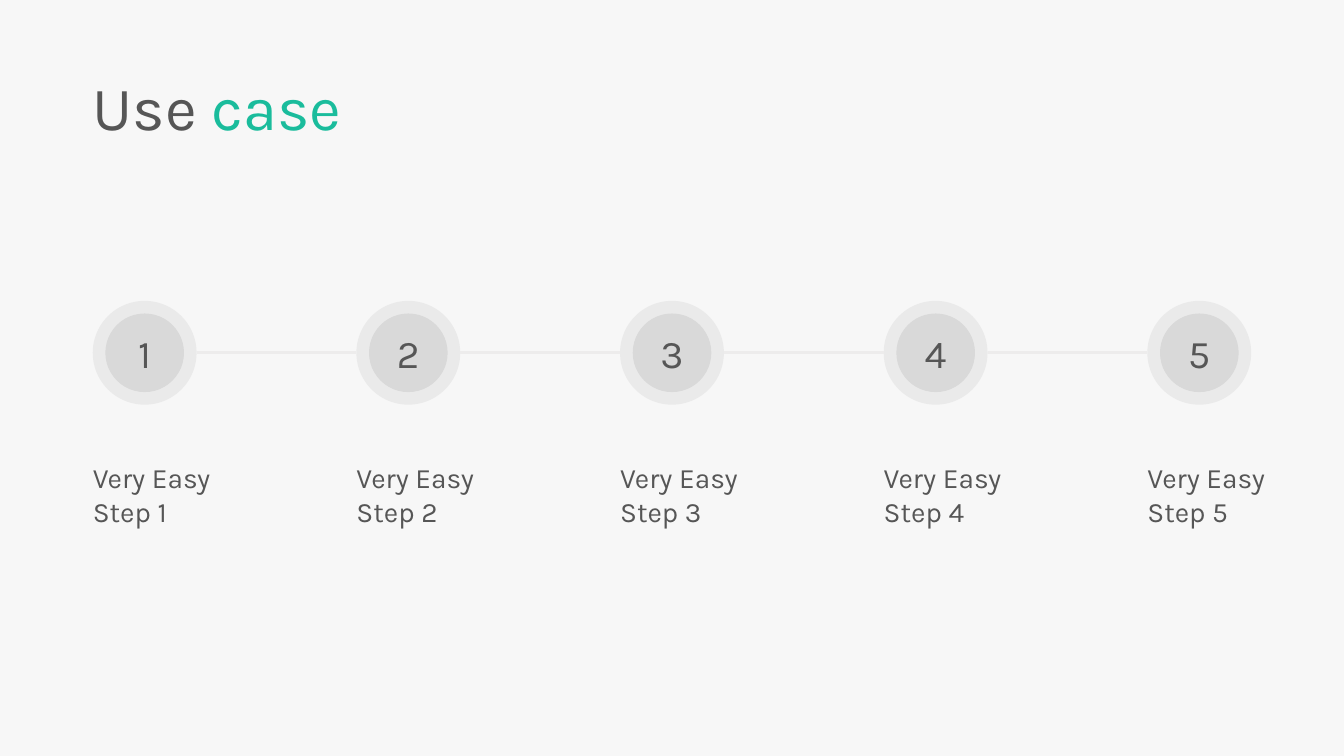
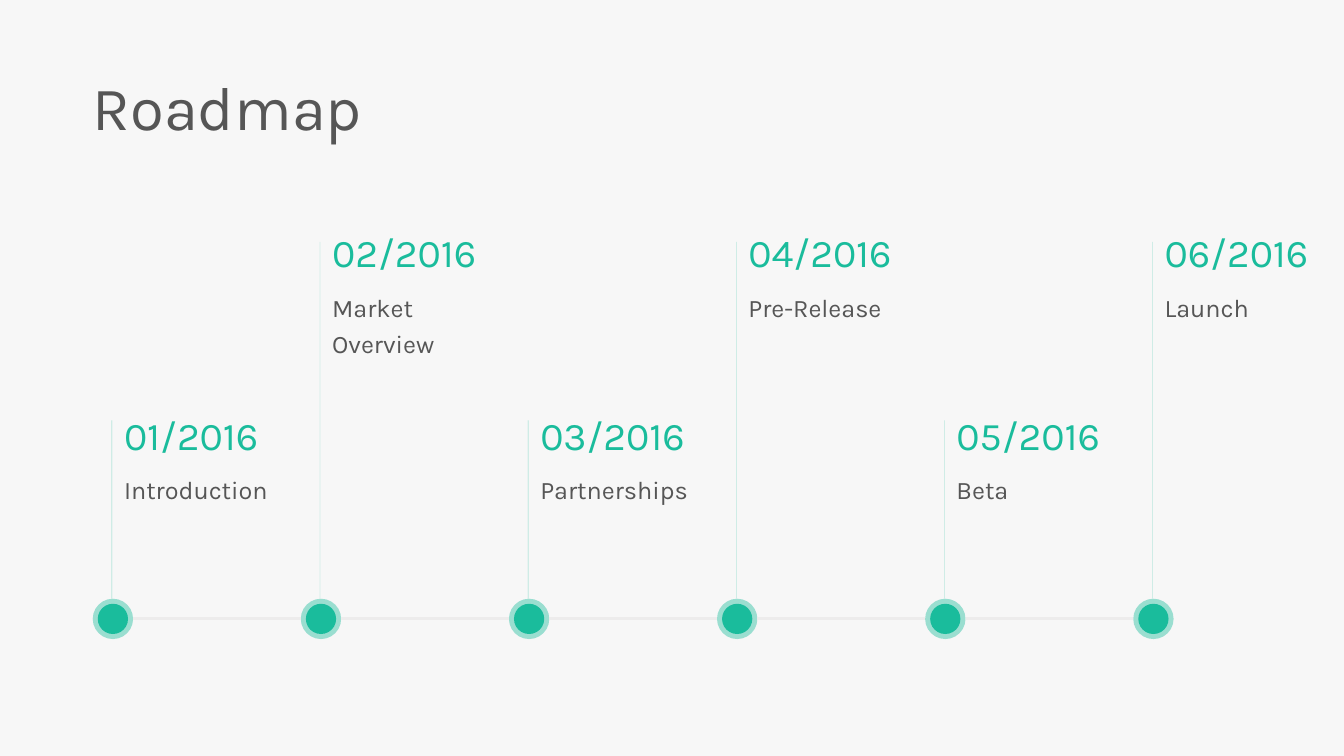
from dataclasses import dataclass

from lxml.etree import SubElement
from pptx import Presentation
from pptx.dml.color import RGBColor
from pptx.enum.shapes import MSO_CONNECTOR, MSO_SHAPE
from pptx.enum.text import MSO_ANCHOR, MSO_AUTO_SIZE, PP_ALIGN
from pptx.oxml.ns import qn
from pptx.util import Inches, Pt

OVAL = MSO_SHAPE.OVAL
STRAIGHT = MSO_CONNECTOR.STRAIGHT
MIDDLE = MSO_ANCHOR.MIDDLE
GROW = MSO_AUTO_SIZE.SHAPE_TO_FIT_TEXT
CENTER = PP_ALIGN.CENTER

SLIDE_WIDTH, SLIDE_HEIGHT = 13.33, 7.5
MARGIN = 0.92
FONT = "Karla"
COLORS = {
    "background": "F7F7F7",
    "text": "565656",
    "accent": "1ABC9C",
    "disc": "D9D9D9",
    "track": "EDECEC",
}
RING_OPACITY = 42
STEM_OPACITY = 51


@dataclass(frozen=True)
class Run:
    text: str
    size: float
    color: str = "text"


@dataclass(frozen=True)
class Track:
    """A row of equally spaced ringed nodes, joined by lines."""
    count: int
    pitch: float
    middle: float
    ring: float
    disc: float
    color: str

    def left(self, column: int) -> float:
        return MARGIN + column * self.pitch

    def center(self, column: int) -> float:
        return self.left(column) + self.ring / 2


@dataclass(frozen=True)
class Milestone:
    date: str
    label: str


STEPS = Track(count=5, pitch=2.615, middle=3.5, ring=1.03, disc=0.78, color="disc")
STEP_LABEL_TOP = 4.52

MILESTONES = [
    Milestone("01/2016", "Introduction"),
    Milestone("02/2016", "Market Overview"),
    Milestone("03/2016", "Partnerships"),
    Milestone("04/2016", "Pre-Release"),
    Milestone("05/2016", "Beta"),
    Milestone("06/2016", "Launch"),
]
ROADMAP = Track(count=len(MILESTONES), pitch=2.064, middle=6.14, ring=0.4, disc=0.3, color="accent")
DATE_TOPS = (4.03, 2.22)  # low and high milestones alternate
STEM_TOPS = (4.17, 2.4)
DATE_HEIGHT = 0.57


def rgb(name: str) -> RGBColor:
    return RGBColor.from_string(COLORS[name])


def set_opacity(element, percent: int) -> None:
    for color in element.iter(qn("a:srgbClr")):
        SubElement(color, qn("a:alpha")).set("val", str(percent * 1000))


def add_runs(paragraph, runs: list[Run]) -> None:
    for item in runs:
        run = paragraph.add_run()
        run.text = item.text
        run.font.name = FONT
        run.font.size = Pt(item.size)
        run.font.color.rgb = rgb(item.color)


def add_text(slide, left: float, top: float, width: float, height: float,
             runs: list[Run], inset: float = 0, line_spacing: float | None = None,
             space_before: float | None = None) -> None:
    box = slide.shapes.add_textbox(Inches(left), Inches(top), Inches(width), Inches(height))
    frame = box.text_frame
    frame.word_wrap = True
    frame.auto_size = GROW
    frame.margin_left = Inches(inset)
    paragraph = frame.paragraphs[0]
    if line_spacing is not None:
        paragraph.line_spacing = line_spacing
    if space_before is not None:
        paragraph.space_before = Pt(space_before)
    add_runs(paragraph, runs)


def add_line(slide, start: tuple[float, float], end: tuple[float, float],
             color: str, width: float, opacity: int = 100) -> None:
    line = slide.shapes.add_connector(STRAIGHT, *map(Inches, start + end))
    line.line.color.rgb = rgb(color)
    line.line.width = Pt(width)
    if opacity < 100:
        set_opacity(line._element, opacity)
    SubElement(line._element.spPr, qn("a:effectLst"))


def add_circle(shapes, center: float, middle: float, size: float, color: str, opacity: int = 100):
    circle = shapes.add_shape(OVAL, Inches(center - size / 2), Inches(middle - size / 2),
                              Inches(size), Inches(size))
    circle.shadow.inherit = False
    circle.fill.solid()
    circle.fill.fore_color.rgb = rgb(color)
    circle.line.fill.background()
    if opacity < 100:
        set_opacity(circle._element.spPr, opacity)
    return circle


def add_node(slide, track: Track, column: int, number: str = "") -> None:
    shapes = slide.shapes.add_group_shape().shapes
    center = track.center(column)
    add_circle(shapes, center, track.middle, track.disc, track.color)
    ring = add_circle(shapes, center, track.middle, track.ring, track.color, RING_OPACITY)
    if number:
        ring.text_frame.vertical_anchor = MIDDLE
        paragraph = ring.text_frame.paragraphs[0]
        paragraph.alignment = CENTER
        add_runs(paragraph, [Run(number, 28)])


def add_track(slide, track: Track, numbered: bool = False) -> None:
    for column in range(track.count):
        add_node(slide, track, column, str(column + 1) if numbered else "")
    for column in range(track.count - 1):
        add_line(slide, (track.left(column) + track.ring, track.middle),
                 (track.left(column + 1), track.middle), "track", 2.25)


def add_titled_slide(presentation, title: list[Run]):
    slide = presentation.slides.add_slide(presentation.slide_layouts[6])
    slide.background.fill.solid()
    slide.background.fill.fore_color.rgb = rgb("background")
    add_text(slide, MARGIN, 0.72, 4.9, 0.77, title, line_spacing=0.9, space_before=10)
    return slide


def build_use_case(presentation) -> None:
    slide = add_titled_slide(presentation, [Run("Use ", 44), Run("case", 44, "accent")])
    add_track(slide, STEPS, numbered=True)
    for column in range(STEPS.count):
        add_text(slide, STEPS.left(column), STEP_LABEL_TOP, 1.69, 0.77,
                 [Run(f"Very Easy Step {column + 1}", 20)])


def build_roadmap(presentation) -> None:
    slide = add_titled_slide(presentation, [Run("Roadmap", 44)])
    add_track(slide, ROADMAP)
    for column, milestone in enumerate(MILESTONES):
        level = column % 2
        stem = ROADMAP.center(column) - 0.01
        top = DATE_TOPS[level]
        add_line(slide, (stem, ROADMAP.middle - ROADMAP.ring / 2), (stem, STEM_TOPS[level]),
                 "accent", 0.25, STEM_OPACITY)
        add_text(slide, stem, top, 1.85, DATE_HEIGHT,
                 [Run(milestone.date, 28, "accent")], inset=0.12)
        add_text(slide, stem, top + DATE_HEIGHT, 1.85, 0.46,
                 [Run(milestone.label, 18)], inset=0.12, line_spacing=1.2)


def main() -> None:
    presentation = Presentation()
    presentation.slide_width = Inches(SLIDE_WIDTH)
    presentation.slide_height = Inches(SLIDE_HEIGHT)
    build_use_case(presentation)
    build_roadmap(presentation)
    presentation.save("out.pptx")


if __name__ == "__main__":
    main()
